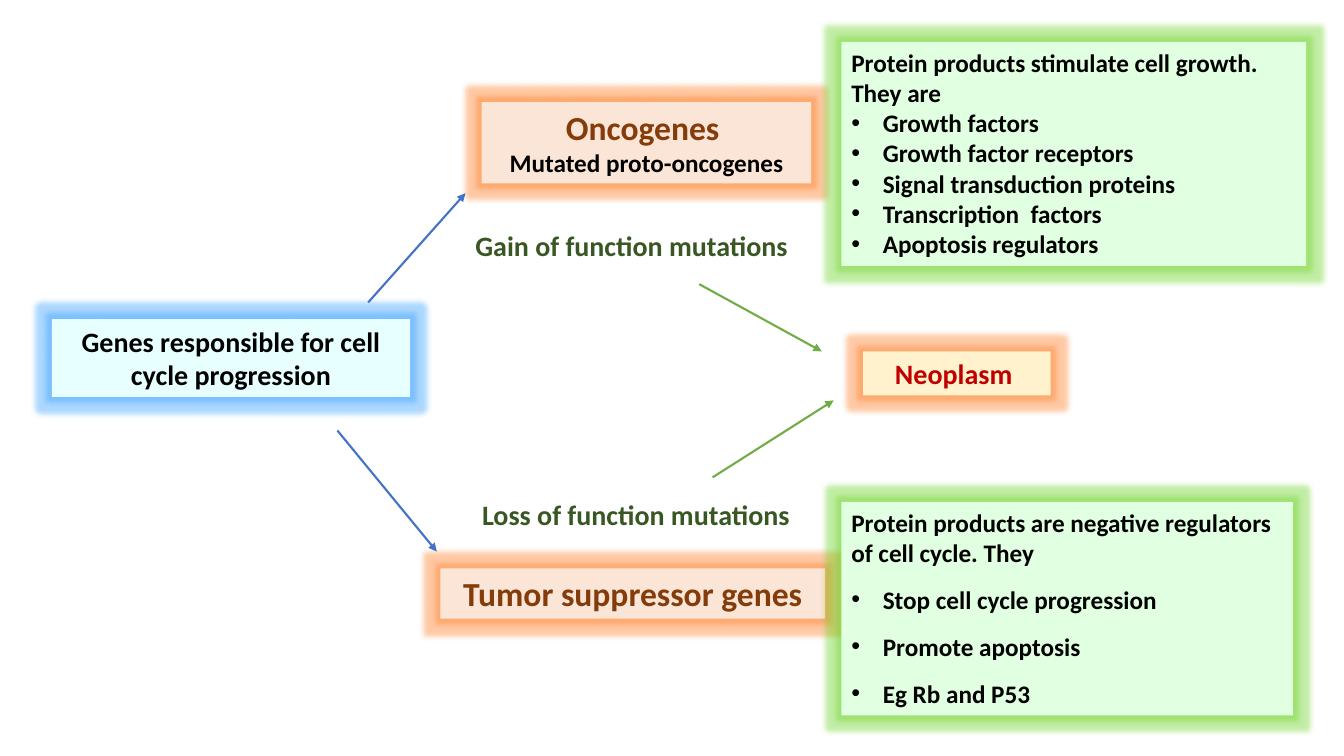
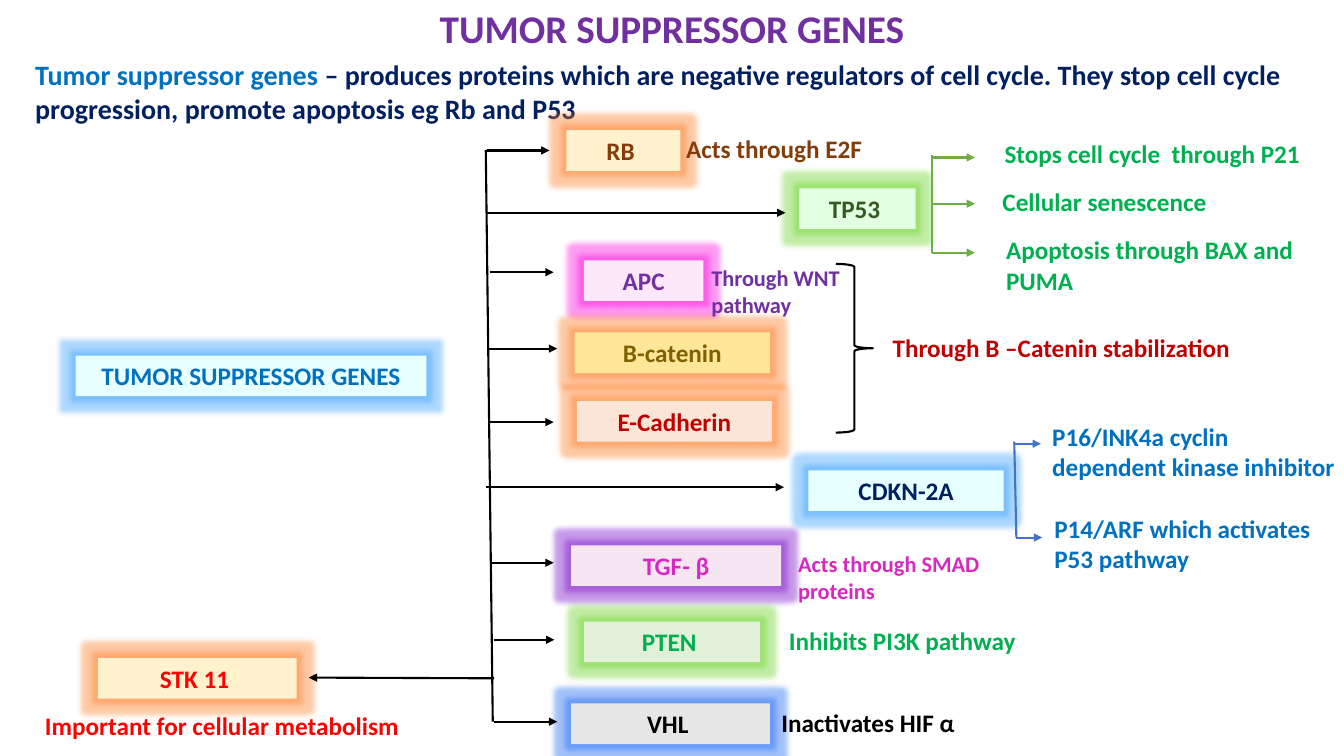
from dataclasses import dataclass
from typing import NamedTuple, Optional

from lxml.etree import SubElement
from pptx import Presentation
from pptx.dml.color import RGBColor
from pptx.enum.shapes import MSO_CONNECTOR as CONN, MSO_SHAPE as SHAPE
from pptx.enum.text import MSO_ANCHOR as ANCHOR, MSO_AUTO_SIZE as AUTO, PP_ALIGN as ALIGN
from pptx.oxml.ns import qn
from pptx.util import Pt

# Shared colours
BLACK, NAVY, BROWN, FOREST = "000000", "002060", "843C0B", "385723"
BLUE, GREEN, RED, CRIMSON = "0070C0", "00B050", "FF0000", "C00000"
PURPLE, MAGENTA, OLIVE = "7030A0", "D729C2", "806000"
CYAN_FILL, PEACH_FILL, MINT_FILL, CREAM_FILL = "E7FFFF", "FBE5D6", "E1FFE1", "FFF2CC"
GLOW_BLUE, GLOW_ORANGE, GLOW_GREEN = "5B9BD5", "ED7D31", "70AD47"
LINE_BLUE, LINE_GREEN = "4472C4", "70AD47"
GLOW_PINK, GLOW_PURPLE = "D729C2", "7030A0"

# Shared formats
FONT = {"name": "Calibri", "bold": True}
FRAME = {"word_wrap": True, "vertical_anchor": ANCHOR.TOP, "auto_size": AUTO.SHAPE_TO_FIT_TEXT}
TITLE_FRAME = {"vertical_anchor": ANCHOR.MIDDLE, "auto_size": AUTO.NONE}
ROW_H, TWO_ROWS_H = 29, 51


class Run(NamedTuple):
    text: str
    color: str = BLACK
    size: float = 18


@dataclass
class Para:
    runs: list[Run]
    bullet: bool = False
    after: float = 0
    spacing: float = 1.0


@dataclass
class Box:
    x: float
    y: float
    w: float
    h: float
    paras: list[Para]
    align: ALIGN = ALIGN.LEFT
    fill: Optional[str] = None
    glow: Optional[str] = None
    frame: Optional[dict] = None


class Line(NamedTuple):
    x1: float
    y1: float
    x2: float
    y2: float
    color: str = BLACK
    arrow: bool = True


def rgb(value: str) -> RGBColor:
    return RGBColor.from_string(value)


def apply(obj, values: dict) -> None:
    for name, value in values.items():
        setattr(obj, name, value)


def add_glow(sp, color: str) -> None:
    effects = sp.element.spPr.find(qn("a:effectLst"))
    glow = SubElement(effects, qn("a:glow"), rad=str(int(Pt(8))))
    clr = SubElement(glow, qn("a:srgbClr"), val=color)
    SubElement(clr, qn("a:satMod"), val="175000")
    SubElement(clr, qn("a:alpha"), val="40000")


def add_bullet(p) -> None:
    props = p._p.get_or_add_pPr()
    props.set("marL", str(int(Pt(22.5))))
    props.set("indent", str(int(Pt(-22.5))))
    SubElement(props, qn("a:buFont"), typeface="Arial")
    SubElement(props, qn("a:buChar"), char="•")


def draw_box(s, box: Box) -> None:
    place = [Pt(v) for v in (box.x, box.y, box.w, box.h)]
    if box.fill:
        sp = s.shapes.add_shape(SHAPE.RECTANGLE, *place)
        sp.fill.solid()
        sp.fill.fore_color.rgb = rgb(box.fill)
        sp.line.fill.background()
        sp.shadow.inherit = False
        add_glow(sp, box.glow)
    else:
        sp = s.shapes.add_textbox(*place)
    tf = sp.text_frame
    apply(tf, FRAME | (box.frame or {}))
    for i, para in enumerate(box.paras):
        p = tf.add_paragraph() if i else tf.paragraphs[0]
        apply(p, {"alignment": box.align, "space_after": Pt(para.after),
                  "line_spacing": para.spacing})
        if para.bullet:
            add_bullet(p)
        for run in para.runs:
            r = p.add_run()
            r.text = run.text
            apply(r.font, FONT | {"size": Pt(run.size)})
            r.font.color.rgb = rgb(run.color)


def draw_line(s, line: Line) -> None:
    cn = s.shapes.add_connector(CONN.STRAIGHT, *(Pt(v) for v in line[:4]))
    cn.line.width = Pt(1.5)
    cn.line.color.rgb = rgb(line.color)
    if line.arrow:
        SubElement(cn.line._get_or_add_ln(), qn("a:tailEnd"), type="triangle")
    SubElement(cn.element.spPr, qn("a:effectLst"))


def draw_brace(s, x: float, y: float, w: float, h: float) -> None:
    sp = s.shapes.add_shape(SHAPE.RIGHT_BRACE, Pt(x), Pt(y), Pt(w), Pt(h))
    sp.fill.background()
    sp.line.width = Pt(1.5)
    sp.line.color.rgb = rgb(BLACK)
    sp.shadow.inherit = False


def label(x: float, y: float, w: float, text: str, color: str,
          size: float = 18, h: float = ROW_H) -> Box:
    return Box(x, y, w, h, [Para([Run(text, color, size)])])


def card(x: float, y: float, w: float, h: float, fill: str, glow: str, *runs: Run) -> Box:
    return Box(x, y, w, h, [Para([run]) for run in runs], ALIGN.CENTER, fill, glow)


def gene(x: float, y: float, w: float, text: str, color: str, fill: str, glow: str) -> Box:
    return card(x, y, w, ROW_H, fill, glow, Run(text, color))


def protein_card(y: float, w: float, h: float, after: float, lead: str, *items: str) -> Box:
    paras = [Para([Run(lead)], after=after)]
    paras += [Para([Run(item)], True, after) for item in items]
    return Box(601, y, w, h, paras, fill=MINT_FILL, glow=GLOW_GREEN)


def draw_all(s, boxes: list[Box], lines: list[Line]) -> None:
    for box in boxes:
        draw_box(s, box)
    for line in lines:
        draw_line(s, line)


def pathways_slide(s) -> None:
    boxes = [
        card(37, 228, 256, 55.5, CYAN_FILL, GLOW_BLUE,
             Run("Genes responsible for cell cycle progression", size=20)),
        card(344, 73, 235.5, 58, PEACH_FILL, GLOW_ORANGE,
             Run("Oncogenes ", BROWN, 24), Run("Mutated proto-oncogenes")),
        card(314.5, 406, 275, 36, PEACH_FILL, GLOW_ORANGE,
             Run("Tumor suppressor genes", BROWN, 24)),
        protein_card(30, 332, 160, 0, "Protein products stimulate cell growth. They are",
                     "Growth factors", "Growth factor receptors",
                     "Signal transduction proteins", "Transcription  factors",
                     "Apoptosis regulators"),
        protein_card(358.5, 322.5, 152.5, 12,
                     "Protein products are negative regulators of cell cycle. They",
                     "Stop cell cycle progression", "Promote apoptosis", "Eg Rb and P53"),
        label(332.5, 160, 258, "Gain of function mutations", FOREST, 20, 31.5),
        Box(312, 352, 284.5, 31.5,
            [Para([Run("Loss of function mutations", FOREST, 20)])], ALIGN.CENTER),
        card(616.5, 251, 134, 31.5, CREAM_FILL, GLOW_ORANGE, Run("Neoplasm ", CRIMSON, 20)),
    ]
    lines = [
        Line(499.5, 203, 587, 251, LINE_GREEN),
        Line(509, 341, 595.5, 286, LINE_GREEN),
        Line(263, 216, 332.5, 138, LINE_BLUE),
        Line(241, 307.5, 312, 394, LINE_BLUE),
    ]
    draw_all(s, boxes, lines)


def suppressors_slide(s) -> None:
    heading = [
        Box(66, 0, 828, 44.5, [Para([Run("TUMOR SUPPRESSOR GENES", PURPLE, 28)], spacing=0.9)],
            ALIGN.CENTER, frame=TITLE_FRAME),
        Box(18, 37.5, 924, 55.5, [Para([
            Run("Tumor suppressor genes ", BLUE, 20),
            Run("– produces proteins which are negative regulators of cell cycle. They stop "
                "cell cycle progression, promote apoptosis eg Rb and P53", NAVY, 20)])]),
    ]
    genes = [
        gene(54, 254, 250.5, "TUMOR SUPPRESSOR GENES", BLUE, CYAN_FILL, GLOW_BLUE),
        gene(404.5, 93, 81.5, "RB ", BROWN, CREAM_FILL, GLOW_ORANGE),
        gene(571, 134.5, 83, "TP53 ", FOREST, MINT_FILL, GLOW_GREEN),
        gene(417, 186, 85.5, "APC", PURPLE, "FDE7FA", GLOW_PINK),
        gene(410.5, 237.5, 139.5, "Β-catenin", OLIVE, "FFE699", GLOW_ORANGE),
        gene(412, 286.5, 139.5, "E-Cadherin", CRIMSON, PEACH_FILL, GLOW_ORANGE),
        gene(577.5, 336, 139.5, "CDKN-2A", NAVY, CYAN_FILL, GLOW_BLUE),
        gene(408, 389.5, 150, "TGF- β", MAGENTA, "F6E6F2", GLOW_PURPLE),
        gene(417, 444, 126, "PTEN ", GREEN, "E2F0D9", GLOW_GREEN),
        gene(408, 502.5, 142, "VHL ", BLACK, "E7E6E6", LINE_BLUE),
        gene(70, 470, 142, "STK 11 ", RED, CREAM_FILL, GLOW_ORANGE),
    ]
    effects = [
        label(483, 92, 140.5, "Acts through E2F", BROWN),
        label(710.5, 95, 230.5, "Stops cell cycle  through P21", GREEN),
        label(709, 129.5, 185, "Cellular senescence", GREEN),
        label(711.5, 164, 240, "Apoptosis through BAX and PUMA", GREEN, h=TWO_ROWS_H),
        label(501, 185, 139.5, "Through WNT pathway", PURPLE, 16, 46),
        label(630.5, 234, 283, "Through B –Catenin stabilization", CRIMSON),
        label(744.5, 297.5, 217.5, "P16/INK4a cyclin dependent kinase inhibitor", BLUE,
              h=TWO_ROWS_H),
        label(746, 363, 214, "P14/ARF which activates P53 pathway", BLUE, h=TWO_ROWS_H),
        label(556.5, 443, 204.5, "Inhibits PI3K pathway", GREEN),
        label(551, 502, 184.5, "Inactivates HIF α", BLACK),
        label(563, 389.5, 152, "Acts through SMAD proteins", MAGENTA, 16, 46),
        label(25, 503.5, 289, "Important for cellular metabolism", RED),
    ]
    # Trunk and its branches: start, end, height
    branches = [(348, 392.5, 107.5), (348, 561, 152), (350, 395.5, 194.5), (348, 398, 249),
                (350, 395.5, 301.5), (347, 560, 348), (350, 395.5, 402), (353, 396, 457),
                (353, 398, 515.5)]
    lines = [Line(347, 107, 352, 515.5, arrow=False), Line(353, 484.5, 220.5, 484)]
    lines += [Line(x1, y, x2, y) for x1, x2, y in branches]
    # Forks after TP53 and CDKN-2A
    lines.append(Line(665.5, 111, 665.5, 180.5, LINE_GREEN, False))
    lines += [Line(665.5, y, 696.5, y, LINE_GREEN) for y in (112.5, 145.5, 180.5)]
    lines.append(Line(724.5, 315.5, 726, 384, LINE_BLUE, False))
    lines += [Line(x, y, x + 18.5, y, LINE_BLUE) for x, y in ((725, 317), (726, 384))]
    draw_all(s, heading + genes + effects, lines)
    draw_brace(s, 597, 188.5, 26.5, 120.5)


def main() -> None:
    prs = Presentation()
    prs.slide_width, prs.slide_height = Pt(960), Pt(540)
    for build in (pathways_slide, suppressors_slide):
        build(prs.slides.add_slide(prs.slide_layouts[6]))
    prs.save("out.pptx")


if __name__ == "__main__":
    main()
